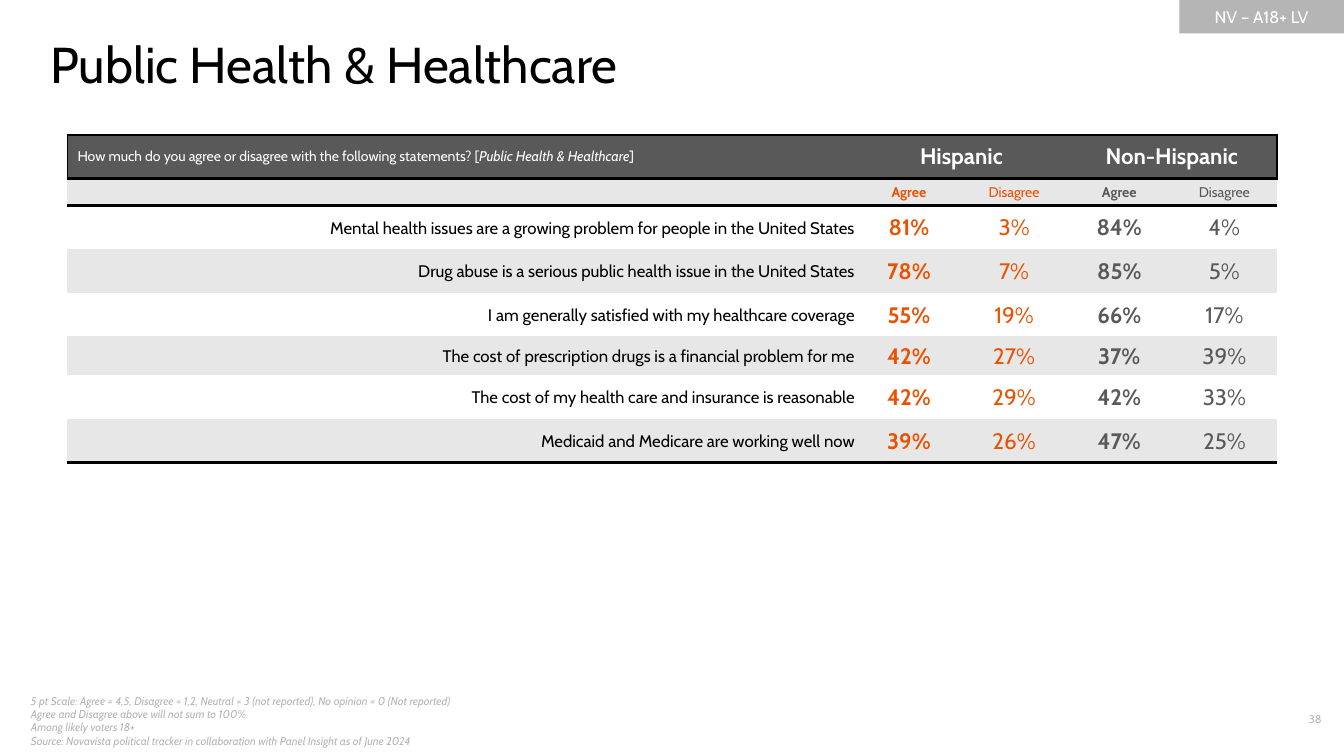
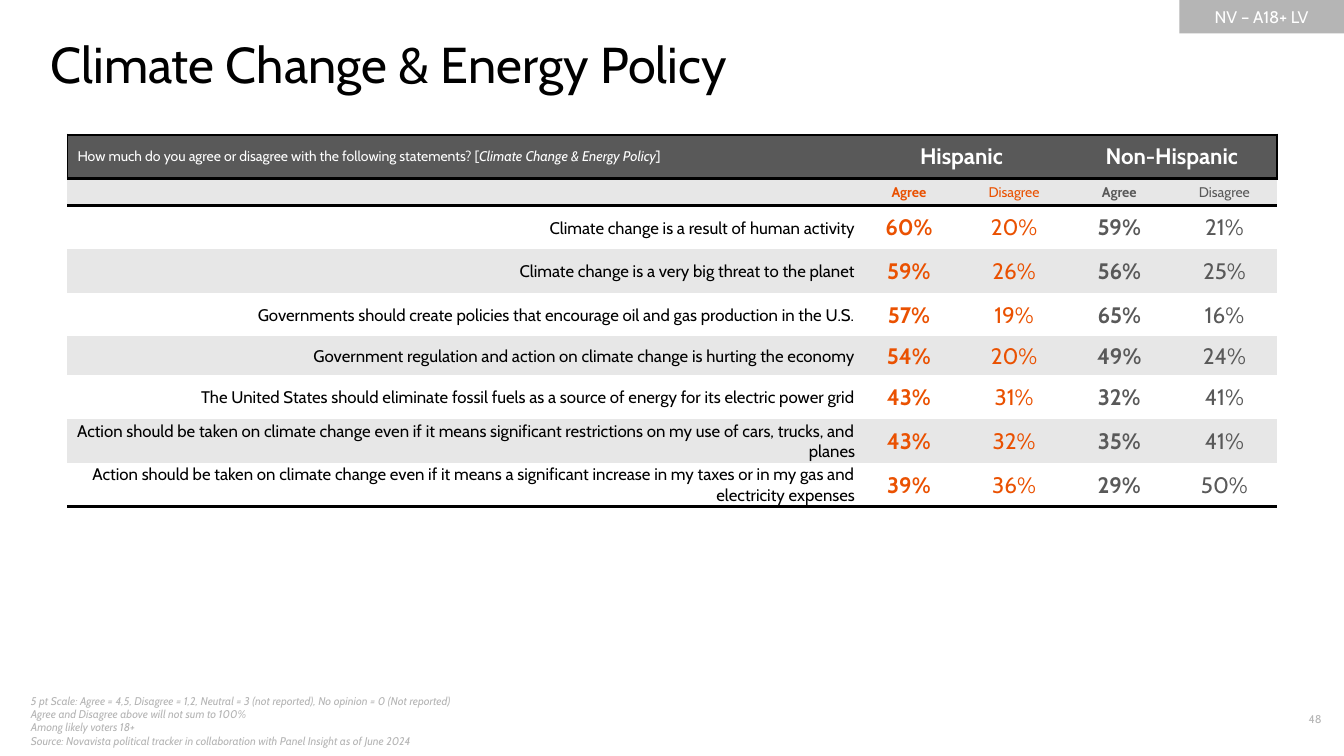
from lxml import etree
from pptx import Presentation
from pptx import util as u
from pptx.dml import color as dye
from pptx.enum import shapes, text
from pptx.oxml import ns

FONT = "Cabin"
BLACK, WHITE = "000000", "FFFFFF"
DARK, SILVER, PALE = "595959", "B5B5B5", "E7E7E7"
ORANGE = "EA5101"
LEFT, MID, RIGHT = text.PP_ALIGN.LEFT, text.PP_ALIGN.CENTER, text.PP_ALIGN.RIGHT
PLAIN = "{2D5ABB26-0587-4C30-8999-92F81FD0307C}"
COLS = [19.88] + [2.65] * 4
HEAD, SUB, ROW, SLIM = 1.1, 0.64, 1.1, 0.98
TAG = "NV – A18+ LV"
ASK = "How much do you agree or disagree with the following statements? ["
NOTES = [
    "5 pt Scale: Agree = 4,5, Disagree = 1,2, Neutral = 3 (not reported), No opinion = 0 (Not reported)",
    "Agree and Disagree above will not sum to 100%",
    "Among likely voters 18+\nSource: Novavista political tracker in collaboration with Panel Insight as of June 2024",
]

HEALTH = [
    ("Mental health issues are a growing problem for people in the United States", 81, 3, 84, 4),
    ("Drug abuse is a serious public health issue in the United States", 78, 7, 85, 5),
    ("I am generally satisfied with my healthcare coverage", 55, 19, 66, 17),
    ("The cost of prescription drugs is a financial problem for me", 42, 27, 37, 39),
    ("The cost of my health care and insurance is reasonable", 42, 29, 42, 33),
    ("Medicaid and Medicare are working well now", 39, 26, 47, 25),
]
CLIMATE = [
    ("Climate change is a result of human activity", 60, 20, 59, 21),
    ("Climate change is a very big threat to the planet", 59, 26, 56, 25),
    ("Governments should create policies that encourage oil and gas production in the U.S.", 57, 19, 65, 16),
    ("Government regulation and action on climate change is hurting the economy", 54, 20, 49, 24),
    ("The United States should eliminate fossil fuels as a source of energy for its electric power grid",
     43, 31, 32, 41),
    ("Action should be taken on climate change even if it means significant restrictions on my use of cars, "
     "trucks, and planes", 43, 32, 35, 41),
    ("Action should be taken on climate change even if it means a significant increase in my taxes or in my "
     "gas and electricity expenses", 39, 36, 29, 50),
]


def tint(code):
    return dye.RGBColor.from_string(code)


def box(*sides):
    return [u.Cm(side) for side in sides]


class Deck:
    def __init__(self):
        self.prs = Presentation()
        self.prs.slide_width, self.prs.slide_height = box(33.87, 19.05)
        self.slide = None

    def start(self, title, page):
        self.slide = self.prs.slides.add_slide(self.prs.slide_layouts[5])
        self.label(NOTES, (0.53, 17.65, 12.98, 1.02), 8, anchor=text.MSO_ANCHOR.MIDDLE, italic=True)
        self.label([str(page)], (31.32, 17.83, 2.24, 0.69), 8, align=RIGHT)
        self.badge(TAG)
        self.title(title)

    def style(self, para, size, code, align=LEFT, bold=False, italic=False):
        para.alignment = align
        font = para.font
        font.name, font.size = FONT, u.Pt(size)
        font.bold, font.italic = bold, italic
        font.color.rgb = tint(code)

    def label(self, lines, place, size, align=LEFT, anchor=text.MSO_ANCHOR.TOP, italic=False):
        frame = self.slide.shapes.add_textbox(*box(*place)).text_frame
        frame.word_wrap = True
        frame.vertical_anchor = anchor
        for i, line in enumerate(lines):
            para = frame.add_paragraph() if i else frame.paragraphs[0]
            para.text = line
            self.style(para, size, SILVER, align, italic=italic)

    def badge(self, words):
        shape = self.slide.shapes.add_shape(shapes.MSO_SHAPE.RECTANGLE, *box(29.72, 0, 4.15, 0.84))
        shape.shadow.inherit = False
        shape.fill.solid()
        shape.fill.fore_color.rgb = tint(SILVER)
        shape.line.fill.background()
        frame = shape.text_frame
        frame.vertical_anchor = text.MSO_ANCHOR.MIDDLE
        frame.text = words
        self.style(frame.paragraphs[0], 12, WHITE, MID)

    def title(self, words):
        shape = self.slide.shapes.title
        shape.left, shape.top, shape.width, shape.height = box(1.27, 0.84, 30.48, 1.55)
        frame = shape.text_frame
        frame.margin_left = frame.margin_top = frame.margin_right = frame.margin_bottom = 0
        frame.vertical_anchor = text.MSO_ANCHOR.TOP
        frame.auto_size = text.MSO_AUTO_SIZE.NONE
        frame.word_wrap = True
        frame.text = words
        self.style(frame.paragraphs[0], 36, BLACK)

    def edge(self, cell, sides):
        props = cell._tc.get_or_add_tcPr()
        for side in "LRTB":
            if side in sides:
                line = etree.SubElement(props, ns.qn("a:ln" + side), w=str(u.Pt(sides[side])))
                fill = etree.SubElement(line, ns.qn("a:solidFill"))
                etree.SubElement(fill, ns.qn("a:srgbClr"), val=BLACK)

    def cell(self, cell, words, back, size, code, align=MID, bold=False, sides=None):
        self.edge(cell, sides or {})
        cell.fill.solid()
        cell.fill.fore_color.rgb = tint(back)
        cell.vertical_anchor = text.MSO_ANCHOR.MIDDLE
        para = cell.text_frame.paragraphs[0]
        for i, part in enumerate(words):
            run = para.add_run()
            run.text = part
            if i == 1:
                run.font.italic = True
        self.style(para, size, code, align, bold)
        if not words:
            etree.SubElement(para._p, ns.qn("a:endParaRPr"), sz=str(size * 100))

    def table(self, topic, rows):
        highs = [HEAD, SUB] + [SLIM if i == 3 else ROW for i in range(len(rows))]
        place = box(1.7, 3.4, sum(COLS), sum(highs))
        grid = self.slide.shapes.add_table(len(highs), len(COLS), *place).table
        grid.first_row = grid.horz_banding = False
        grid._tbl.tblPr.find(ns.qn("a:tableStyleId")).text = PLAIN
        for col, wide in zip(grid.columns, COLS):
            col.width = u.Cm(wide)
        for row, high in zip(grid.rows, highs):
            row.height = u.Cm(high)
        self.heads(grid, topic)
        for r, row in enumerate(rows, 2):
            self.row(grid, r, row, {"B": 2.25} if r == len(highs) - 1 else {})

    def heads(self, grid, topic):
        for c in (1, 3):
            grid.cell(0, c).merge(grid.cell(0, c + 1))
        tops = [[ASK, topic, "]"], ["Hispanic"], [], ["Non-Hispanic"], []]
        subs = [[]] + [["Agree"], ["Disagree"]] * 2
        for c, (top, sub) in enumerate(zip(tops, subs)):
            sides = {"T": 2.25, "B": 2.25}
            if c == 0:
                sides["L"] = 1
            if c >= 3:
                sides["R"] = 1
            self.cell(grid.cell(0, c), top, DARK, 16 if c else 10, WHITE, MID if c else LEFT, c > 0, sides)
            self.cell(grid.cell(1, c), sub, PALE, 10, ORANGE if c < 3 else DARK, bold=c % 2 == 1,
                      sides={"T": 2.25})

    def row(self, grid, r, row, sides):
        back = PALE if r % 2 else WHITE
        for c, value in enumerate(row):
            cell = grid.cell(r, c)
            cell.margin_left = cell.margin_right = cell.margin_top = u.Cm(0.03)
            cell.margin_bottom = 0
            if c:
                code = ORANGE if c < 3 else DARK
                self.cell(cell, [f"{value}%"], back, 16, code, bold=c % 2 == 1, sides=sides)
            else:
                self.cell(cell, [value], back, 12, BLACK, RIGHT, sides=sides)


def main():
    deck = Deck()
    for topic, page, rows in (
        ("Public Health & Healthcare", 38, HEALTH),
        ("Climate Change & Energy Policy", 48, CLIMATE),
    ):
        deck.start(topic, page)
        deck.table(topic, rows)
    deck.prs.save("out.pptx")


if __name__ == "__main__":
    main()
